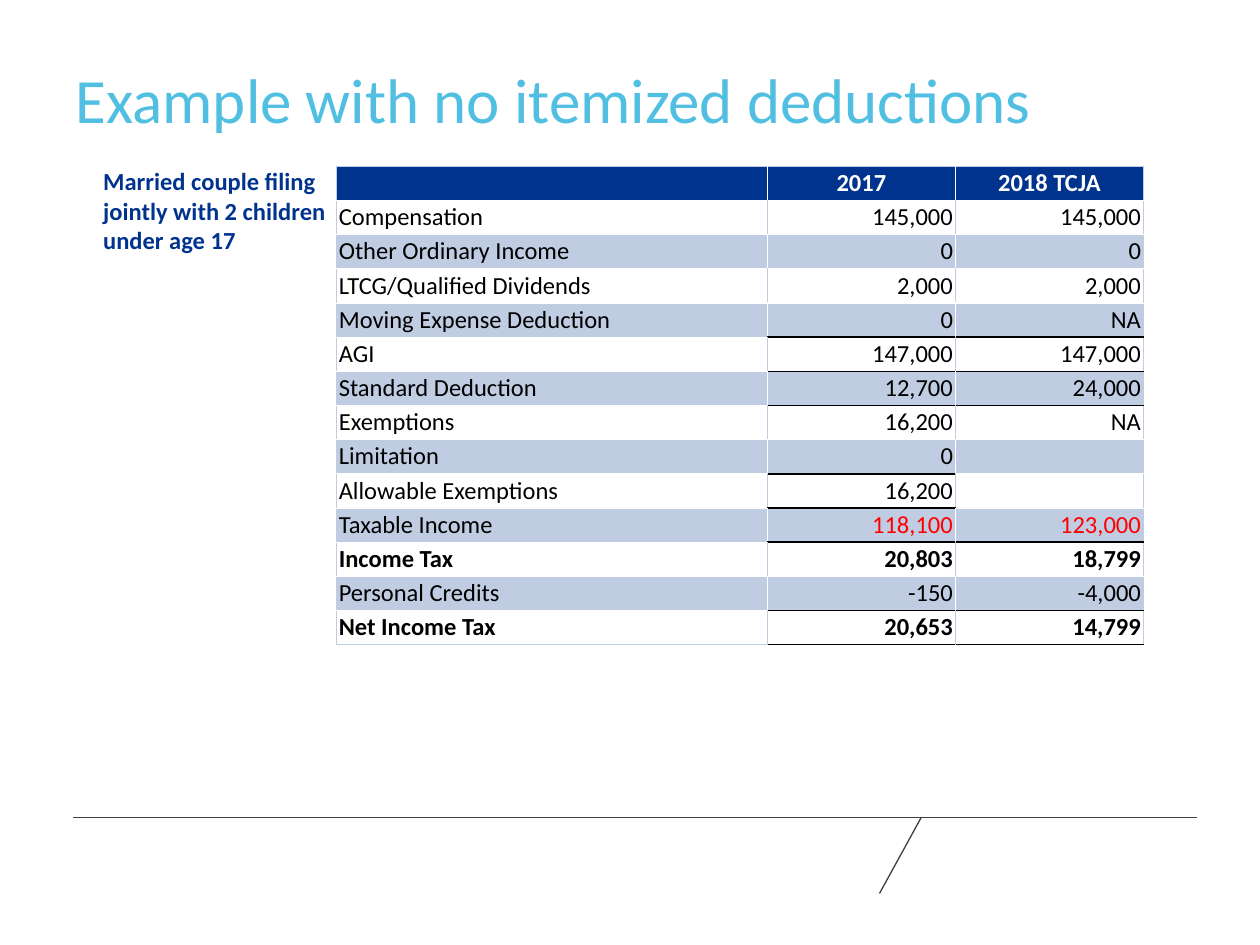
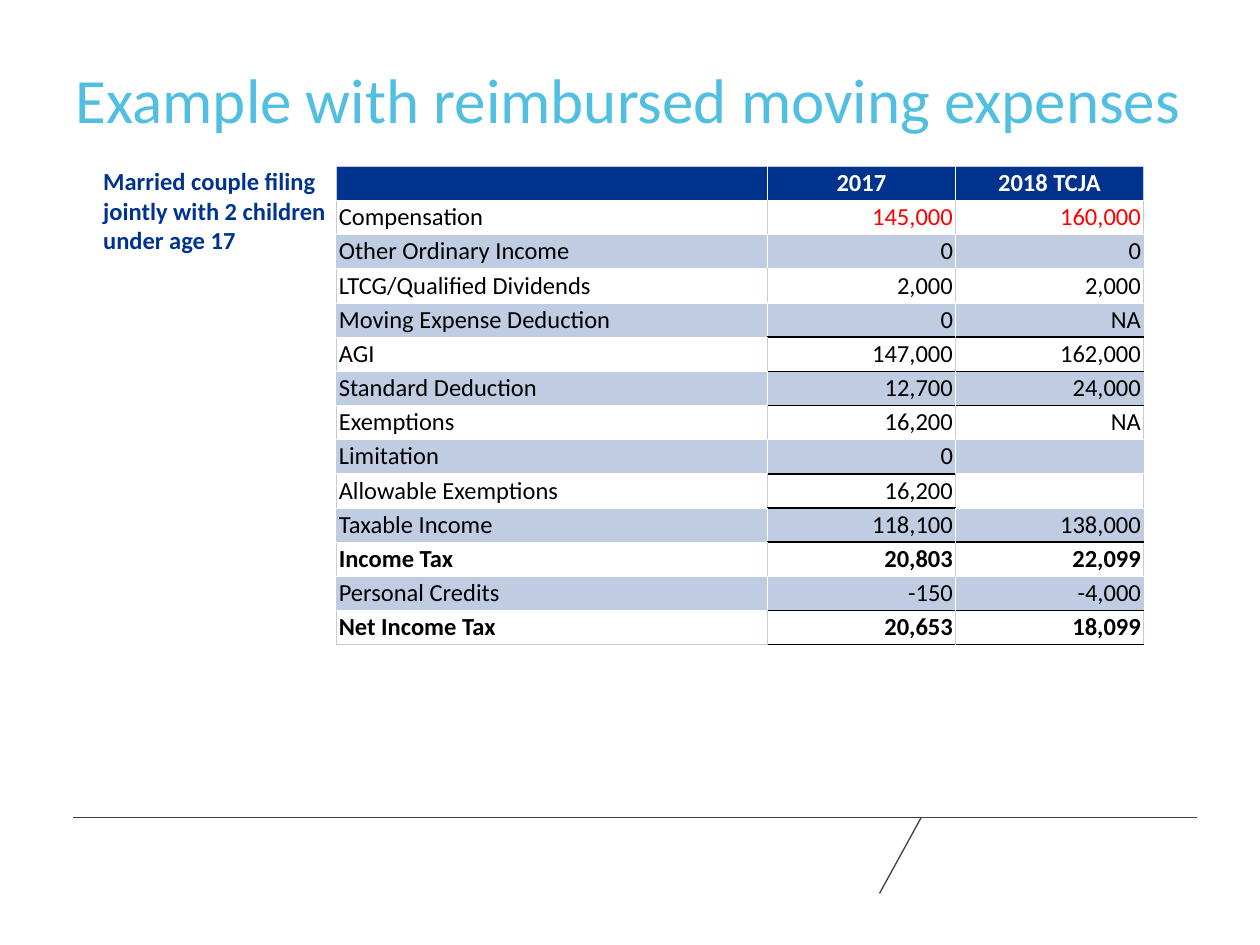
import lxml.etree
import pptx
import pptx.dml.color
import pptx.enum.shapes
import pptx.enum.text
import pptx.oxml.ns
import pptx.util

Cm, Pt = pptx.util.Cm, pptx.util.Pt
ALIGN = pptx.enum.text.PP_ALIGN
ANCHOR = pptx.enum.text.MSO_ANCHOR

# Content
HOUSEHOLD = "Married couple filing jointly with 2 children under age 17"
HEADER = ("", "2017", "2018 TCJA")
# Label, 2017 value, number of value columns ruled off below
TAX_LINES = [
    ("Compensation", "145,000", 0),
    ("Other Ordinary Income", "0", 0),
    ("LTCG/Qualified Dividends", "2,000", 0),
    ("Moving Expense Deduction", "0", 2),
    ("AGI", "147,000", 2),
    ("Standard Deduction", "12,700", 2),
    ("Exemptions", "16,200", 0),
    ("Limitation", "0", 1),
    ("Allowable Exemptions", "16,200", 1),
    ("Taxable Income", "118,100", 2),
    ("Income Tax", "20,803", 0),
    ("Personal Credits", "-150", 2),
    ("Net Income Tax", "20,653", 2),
]
BOLD_LINES = ("Income Tax", "Net Income Tax")
EXAMPLES = [
    {
        "title": "Example with no itemized deductions",
        "title_width": 22.05,
        "red_line": "Taxable Income",
        "values_2018": ["145,000", "0", "2,000", "NA", "147,000", "24,000", "NA",
                        "", "", "123,000", "18,799", "-4,000", "14,799"],
    },
    {
        "title": "Example with reimbursed moving expenses",
        "title_width": 23.7,
        "red_line": "Compensation",
        "values_2018": ["160,000", "0", "2,000", "NA", "162,000", "24,000", "NA",
                        "", "", "138,000", "22,099", "-4,000", "18,099"],
    },
]

# Shared look
NAVY, SKY, PALE = "00338D", "51BFE1", "BFCCE2"
WHITE, BLACK, RED, GREY = "FFFFFF", "000000", "FF0000", "3F3F42"
TITLE_FONT = {"name": "Calibri", "size": Pt(36), "bold": False}
BODY_FONT = {"name": "Calibri", "size": Pt(14)}
TABLE_LEFT, TABLE_TOP = 6.78, 3.35
COLUMN_WIDTHS = (8.69, 3.79, 3.79)
ROW_HEIGHT = 0.69
FOOTER_LINES = [(1.47, 16.48, 24.13, 16.48), (17.73, 18.01, 18.57, 16.48)]


def rgb(color):
    return pptx.dml.color.RGBColor.from_string(color)


def set_attributes(target, values):
    for name, value in values.items():
        setattr(target, name, value)


def write(paragraph, text, font, color):
    run = paragraph.add_run()
    run.text = text
    set_attributes(run.font, font)
    run.font.color.rgb = rgb(color)


def set_border(cell, side, color, width):
    properties = cell._tc.get_or_add_tcPr()
    line = lxml.etree.SubElement(properties, pptx.oxml.ns.qn("a:ln" + side), w=str(Pt(width)))
    fill = lxml.etree.SubElement(line, pptx.oxml.ns.qn("a:solidFill"))
    lxml.etree.SubElement(fill, pptx.oxml.ns.qn("a:srgbClr"), val=color)


def add_footer_lines(slide):
    for ends in FOOTER_LINES:
        line = slide.shapes.add_connector(
            pptx.enum.shapes.MSO_CONNECTOR.STRAIGHT, *map(Cm, ends))
        line.line.color.rgb = rgb(GREY)
        line.line.width = Pt(0.75)
        lxml.etree.SubElement(line._element.spPr, pptx.oxml.ns.qn("a:effectLst"))


def add_title(slide, text, width):
    title = slide.shapes.title
    set_attributes(title, {"left": Cm(1.27), "top": Cm(1.27),
                           "width": Cm(width), "height": Cm(2.95)})
    set_attributes(title.text_frame, {"vertical_anchor": ANCHOR.TOP, "word_wrap": True})
    paragraph = title.text_frame.paragraphs[0]
    set_attributes(paragraph, {"alignment": ALIGN.LEFT, "line_spacing": 0.9})
    write(paragraph, text, TITLE_FONT, SKY)


def add_household(slide):
    box = slide.shapes.add_textbox(Cm(2.08), Cm(TABLE_TOP), Cm(4.93), Cm(1.8))
    set_attributes(box.text_frame, {"word_wrap": True, "margin_left": 0, "margin_top": 0,
                                    "margin_right": 0, "margin_bottom": 0})
    write(box.text_frame.paragraphs[0], HOUSEHOLD, BODY_FONT | {"bold": True}, NAVY)


def draw_borders(cell, row, column, filled):
    """Pale outer edge and plain rows, white inside fills, black under subtotals."""
    last_row, last_column = len(TAX_LINES), len(HEADER) - 1

    def horizontal(row_above):
        ruled_columns = TAX_LINES[row_above - 1][2] if row_above > 0 else 0
        if 1 <= column <= ruled_columns:
            return BLACK, 1
        return (PALE if row_above in (-1, last_row) else WHITE), 0.5

    inside = WHITE if filled else PALE
    set_border(cell, "L", PALE if column == 0 else inside, 0.5)
    set_border(cell, "R", PALE if column == last_column else inside, 0.5)
    set_border(cell, "T", *horizontal(row - 1))
    set_border(cell, "B", *horizontal(row))


def add_tax_table(slide, example):
    rows = [HEADER] + [(label, value_2017, value_2018) for (label, value_2017, _), value_2018
                       in zip(TAX_LINES, example["values_2018"])]
    table = slide.shapes.add_table(
        len(rows), len(HEADER), Cm(TABLE_LEFT), Cm(TABLE_TOP),
        Cm(sum(COLUMN_WIDTHS)), Cm(ROW_HEIGHT * len(rows))).table
    table.horz_banding = False
    for column, width in zip(table.columns, COLUMN_WIDTHS):
        column.width = Cm(width)

    for row, texts in enumerate(rows):
        header = row == 0
        fill = NAVY if header else PALE if row % 2 == 0 else None
        for column, text in enumerate(texts):
            cell = table.cell(row, column)
            set_attributes(cell, {
                "margin_left": Cm(0.05), "margin_right": Cm(0.05),
                "margin_top": Cm(0.04), "margin_bottom": Cm(0.04),
                "vertical_anchor": ANCHOR.BOTTOM if header else ANCHOR.TOP})
            draw_borders(cell, row, column, fill is not None)
            if fill:
                cell.fill.solid()
                cell.fill.fore_color.rgb = rgb(fill)
            else:
                cell.fill.background()

            paragraph = cell.text_frame.paragraphs[0]
            paragraph.alignment = (ALIGN.CENTER if header else
                                   ALIGN.RIGHT if column else ALIGN.LEFT)
            if text:
                red = column > 0 and texts[0] == example["red_line"]
                color = WHITE if header else RED if red else BLACK
                bold = header or texts[0] in BOLD_LINES
                write(paragraph, text, BODY_FONT | {"bold": bold}, color)
            else:
                # Keeps an empty cell from stretching its row
                lxml.etree.SubElement(
                    paragraph._p, pptx.oxml.ns.qn("a:endParaRPr"), sz="1400")
    for table_row in table.rows:
        table_row.height = Cm(ROW_HEIGHT)


def main():
    presentation = pptx.Presentation()
    presentation.slide_width, presentation.slide_height = Cm(25.4), Cm(19.05)
    for example in EXAMPLES:
        slide = presentation.slides.add_slide(presentation.slide_layouts[5])
        add_footer_lines(slide)
        add_title(slide, example["title"], example["title_width"])
        add_household(slide)
        add_tax_table(slide, example)
    presentation.save("out.pptx")


if __name__ == "__main__":
    main()
